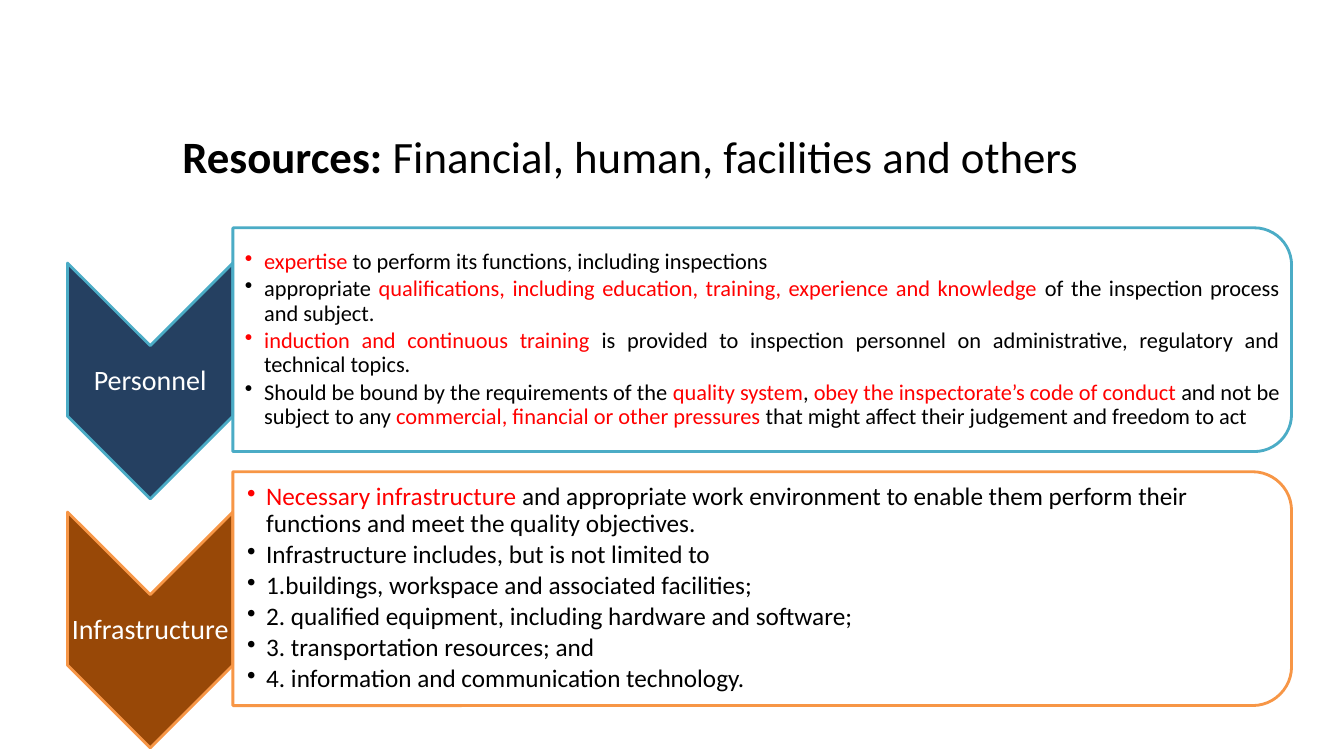
"""Build a slide on inspectorate resources: two chevrons, each with a panel of bullets."""
from lxml import etree
from pptx import Presentation, util as u
from pptx.dml.color import RGBColor
from pptx.enum import shapes, text
from pptx.oxml.ns import qn

CELL = u.Inches(0.1)
COLORS = {"text": "000000", "key": "FF0000", "panel": "FFFFFF", "label": "FFFFFF",
          "navy": "254061", "teal": "4BACC6", "brown": "984807", "orange": "F79646"}
FONT = "Calibri"
ROW_CENTER, ROW_PITCH = 33.7, 24.7
CHEVRON_LEFT, CHEVRON_WIDTH, CHEVRON_HEIGHT, CHEVRON_DROP = 6.7, 16.4, 23.4, 4.1
PANEL_LEFT, PANEL_WIDTH, PANEL_MARGIN = 23.1, 105, 1.1
ROWS = [
    {"label": "Personnel", "fill": "navy", "line": "teal", "height": 22.2, "size": 16,
     "inset": 1.2, "align": text.PP_ALIGN.JUSTIFY, "bullets": [
         "|expertise |to perform its functions, including inspections",
         "appropriate |qualifications, including education, training, experience and "
         "knowledge |of the inspection process and subject.",
         "|induction and continuous training |is provided to inspection personnel on "
         "administrative, regulatory and technical topics.",
         "Should be bound by the requirements of the |quality system|, |obey the "
         "inspectorate’s code of conduct |and not be subject to any |commercial, "
         "financial or other pressures |that might affect their judgement and freedom to act"]},
    {"label": "Infrastructure", "fill": "brown", "line": "orange", "height": 23.2, "size": 18,
     "inset": 1.4, "align": text.PP_ALIGN.LEFT, "bullets": [
         "|Necessary infrastructure |and appropriate work environment to enable them "
         "perform their functions and meet the quality objectives.",
         "Infrastructure includes, but is not limited to",
         "1.buildings, workspace and associated facilities;",
         "2. qualified equipment, including hardware and software;",
         "3. transportation resources; and",
         "4. information and communication technology."]},
]


def cells(*counts):
    """Turn counts of grid cells into lengths."""
    return [u.Emu(round(count * CELL)) for count in counts]


def color(name):
    """Return a named colour."""
    return RGBColor.from_string(COLORS[name])


def add_turned_shape(slide, kind, left, center, width, height, fill, line):
    """Add a shape turned a quarter clockwise, given its bounds as seen."""
    middle = left + width / 2
    shape = slide.shapes.add_shape(
        kind, *cells(middle - height / 2, center - width / 2, height, width))
    shape.rotation = 90
    shape.shadow.inherit = False
    shape.fill.solid()
    shape.fill.fore_color.rgb = color(fill)
    shape.line.color.rgb = color(line)
    shape.line.width = u.Pt(2)
    return shape


def make_translucent(shape, percent):
    """Set the opacity of a solid fill."""
    fill_color = shape.fill._xPr.find(qn("a:solidFill"))[0]
    etree.SubElement(fill_color, qn("a:alpha"), val=str(percent * 1000))


def add_text_box(slide, bounds, inset, anchor=text.MSO_ANCHOR.MIDDLE):
    """Add a wrapping text box and return its frame."""
    frame = slide.shapes.add_textbox(*cells(*bounds)).text_frame
    frame.word_wrap = True
    frame.vertical_anchor = anchor
    margins = cells(*inset)
    frame.margin_left, frame.margin_top, frame.margin_right, frame.margin_bottom = margins
    return frame


def add_run(paragraph, words, size, color_name, bold=False):
    """Add a formatted run."""
    run = paragraph.add_run()
    run.text = words
    run.font.name, run.font.size, run.font.bold = FONT, u.Pt(size), bold
    run.font.color.rgb = color(color_name)


def add_bullet(paragraph, marked_text, size, align):
    """Fill a bulleted paragraph, with key words between bars."""
    paragraph.alignment = align
    paragraph.line_spacing = 0.9
    paragraph.space_after = u.Pt(size * 0.15)
    properties = paragraph._p.get_or_add_pPr()
    indent = u.Inches(0.19)
    properties.set("marL", str(indent))
    properties.set("indent", str(-indent))
    etree.SubElement(properties, qn("a:buChar"), char="•")
    for position, words in enumerate(marked_text.split("|")):
        if words:
            add_run(paragraph, words, size, "key" if position % 2 else "text")


def add_title(slide):
    """Add the heading with its bold lead."""
    frame = add_text_box(slide, (17.1, 12.3, 99.2, 49.5), (1, 0.5, 1, 0.5),
                         text.MSO_ANCHOR.TOP)
    paragraph = frame.paragraphs[0]
    paragraph.space_before = u.Pt(6.4)
    add_run(paragraph, "Resources:", 32, "text", bold=True)
    add_run(paragraph, " Financial, human, facilities and others", 32, "text")


def add_chevron(slide, row, center):
    """Add a downward chevron and its label."""
    add_turned_shape(slide, shapes.MSO_SHAPE.CHEVRON, CHEVRON_LEFT, center,
                     CHEVRON_WIDTH, CHEVRON_HEIGHT, row["fill"], row["line"])
    frame = add_text_box(slide, (CHEVRON_LEFT, center - 3.5, CHEVRON_WIDTH, 7), [0.1] * 4)
    paragraph = frame.paragraphs[0]
    paragraph.alignment = text.PP_ALIGN.CENTER
    paragraph.line_spacing = 0.9
    paragraph.space_after = u.Pt(7)
    add_run(paragraph, row["label"], 20, "label")


def add_panel(slide, row, center):
    """Add a panel rounded on the right and its bullets."""
    height = row["height"]
    panel = add_turned_shape(slide, shapes.MSO_SHAPE.ROUND_2_SAME_RECTANGLE, PANEL_LEFT,
                             center, PANEL_WIDTH, height, "panel", row["line"])
    make_translucent(panel, 90)
    bounds = (PANEL_LEFT, center - height / 2 + PANEL_MARGIN,
              PANEL_WIDTH - PANEL_MARGIN, height - 2 * PANEL_MARGIN)
    frame = add_text_box(slide, bounds, (row["inset"], 0.1, 0.1, 0.1))
    for position, bullet in enumerate(row["bullets"]):
        paragraph = frame.add_paragraph() if position else frame.paragraphs[0]
        add_bullet(paragraph, bullet, row["size"], row["align"])


def main():
    """Build and save the slide."""
    presentation = Presentation()
    presentation.slide_width, presentation.slide_height = u.Inches(13.33), u.Inches(7.5)
    slide = presentation.slides.add_slide(presentation.slide_layouts[6])
    add_title(slide)
    for position, row in enumerate(ROWS):
        center = ROW_CENTER + position * ROW_PITCH
        add_chevron(slide, row, center + CHEVRON_DROP)
        add_panel(slide, row, center)
    presentation.save("out.pptx")


if __name__ == "__main__":
    main()
